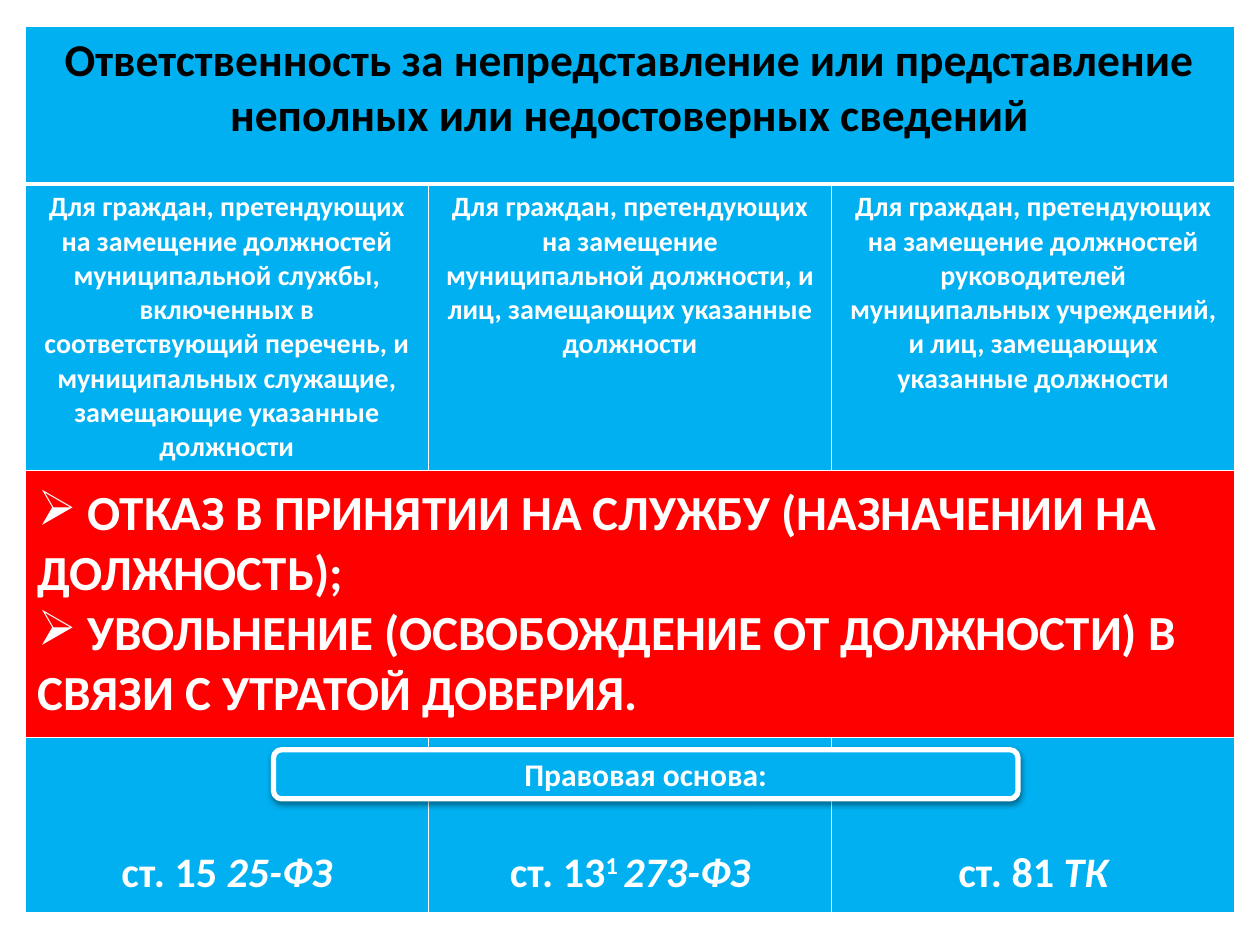
from typing import NamedTuple

from lxml import etree
from pptx import Presentation
from pptx import util as u
from pptx.dml.color import RGBColor
from pptx.enum import shapes, text
from pptx.oxml import parse_xml
from pptx.oxml.ns import nsdecls, qn

BLUE = RGBColor(0x00, 0xB0, 0xF0)
RED = RGBColor(0xFF, 0x00, 0x00)
WHITE = RGBColor(0xFF, 0xFF, 0xFF)
BLACK = RGBColor(0x00, 0x00, 0x00)
FONT = "Calibri"


class Run(NamedTuple):
    text: str
    italic: bool = False
    superscript: bool = False


class Style(NamedTuple):
    size: int
    color: RGBColor = WHITE
    align: text.PP_ALIGN = text.PP_ALIGN.CENTER
    bullet: str = ""


TITLE = Style(26, BLACK)
GROUP = Style(16)
SANCTION = Style(28, align=text.PP_ALIGN.LEFT, bullet="➢")
LAW = Style(24)
BADGE = Style(18)

HEADING = "Ответственность за непредставление или представление неполных или недостоверных сведений"
GROUPS = [
    "Для граждан, претендующих на замещение должностей муниципальной службы, включенных "
    "в соответствующий перечень, и муниципальных служащие, замещающие указанные должности",
    "Для граждан, претендующих на замещение муниципальной должности, и лиц, "
    "замещающих указанные должности",
    "Для граждан, претендующих на замещение должностей руководителей муниципальных "
    "учреждений, и лиц, замещающих указанные должности",
]
SANCTIONS = [
    " ОТКАЗ В ПРИНЯТИИ НА СЛУЖБУ (НАЗНАЧЕНИИ НА ДОЛЖНОСТЬ);",
    " УВОЛЬНЕНИЕ (ОСВОБОЖДЕНИЕ ОТ ДОЛЖНОСТИ) В СВЯЗИ С УТРАТОЙ ДОВЕРИЯ.",
]
LAWS = [
    [Run("ст. 15 "), Run("25-ФЗ", italic=True)],
    [Run("ст. 13"), Run("1 ", superscript=True), Run("273-ФЗ", italic=True)],
    [Run("ст. 81 "), Run("ТК", italic=True)],
]
ROW_HEIGHTS = [1.25, 2.27, 2.12, 1.39]
COL_WIDTH = 3.2


def write(tf, paragraphs: list[list[Run]], style: Style) -> None:
    """Fill a text frame, one paragraph per list of runs."""
    tf.word_wrap = True
    for i, runs in enumerate(paragraphs):
        p = tf.paragraphs[0] if i == 0 else tf.add_paragraph()
        p.alignment = style.align
        if style.bullet:
            pPr = p._p.get_or_add_pPr()
            pPr.set("marL", "0")
            pPr.set("indent", "0")
            etree.SubElement(pPr, qn("a:buChar")).set("char", style.bullet)
        for run in runs:
            r = p.add_run()
            r.text = run.text
            r.font.name = FONT
            r.font.size = u.Pt(style.size)
            r.font.bold = True
            r.font.italic = run.italic
            r.font.color.rgb = style.color
            if run.superscript:
                r._r.get_or_add_rPr().set("baseline", "30000")


def format_cell(cell, fill: RGBColor, bottom: float = 1, top: float = 1) -> None:
    """Set the fill and the white borders, widths in points."""
    cell.fill.solid()
    cell.fill.fore_color.rgb = fill
    widths = {"lnL": 1, "lnR": 1, "lnT": top, "lnB": bottom}
    for i, (tag, width) in enumerate(widths.items()):
        cell._tc.get_or_add_tcPr().insert(i, parse_xml(
            f'<a:{tag} {nsdecls("a")} w="{u.Pt(width)}"><a:solidFill>'
            f'<a:srgbClr val="{WHITE}"/></a:solidFill></a:{tag}>'))


def add_sanctions_table(slide) -> None:
    frame = slide.shapes.add_table(
        len(ROW_HEIGHTS), len(GROUPS), u.Inches(0.2), u.Inches(0.21),
        u.Inches(COL_WIDTH * len(GROUPS)), u.Inches(sum(ROW_HEIGHTS)))
    table = frame.table
    for col in table.columns:
        col.width = u.Inches(COL_WIDTH)
    for i, height in enumerate(ROW_HEIGHTS):
        table.rows[i].height = u.Inches(height)
        for cell in table.rows[i].cells:
            format_cell(cell, RED if i == 2 else BLUE,
                        bottom=3 if i == 0 else 1, top=3 if i == 1 else 1)

    # Full-width rows
    for i in (0, 2):
        table.cell(i, 0).merge(table.cell(i, len(GROUPS) - 1))
    write(table.cell(0, 0).text_frame, [[Run(HEADING)]], TITLE)
    sanctions = table.cell(2, 0)
    sanctions.vertical_anchor = text.MSO_ANCHOR.MIDDLE
    write(sanctions.text_frame, [[Run(s)] for s in SANCTIONS], SANCTION)

    # One column per group of people
    for col, (group, law) in enumerate(zip(GROUPS, LAWS)):
        write(table.cell(1, col).text_frame, [[Run(group)]], GROUP)
        cell = table.cell(3, col)
        cell.vertical_anchor = text.MSO_ANCHOR.BOTTOM
        cell.margin_bottom = u.Inches(0.11)
        write(cell.text_frame, [law], LAW)


def add_badge(slide, label: str) -> None:
    sp = slide.shapes.add_shape(
        shapes.MSO_SHAPE.ROUNDED_RECTANGLE,
        u.Inches(2.17), u.Inches(5.95), u.Inches(5.91), u.Inches(0.39))
    sp.fill.solid()
    sp.fill.fore_color.rgb = BLUE
    sp.line.color.rgb = WHITE
    sp.line.width = u.Pt(3)
    sp.shadow.inherit = False
    sp._element.spPr.find(qn("a:effectLst")).append(parse_xml(
        f'<a:outerShdw {nsdecls("a")} blurRad="{u.Pt(3.1)}" dist="{u.Pt(1.6)}" '
        f'dir="5400000" rotWithShape="0"><a:srgbClr val="{BLACK}">'
        '<a:alpha val="38000"/></a:srgbClr></a:outerShdw>'))
    sp.text_frame.vertical_anchor = text.MSO_ANCHOR.MIDDLE
    write(sp.text_frame, [[Run(label)]], BADGE)


def main() -> None:
    prs = Presentation()
    prs.slide_width = u.Inches(10)
    prs.slide_height = u.Inches(7.5)
    slide = prs.slides.add_slide(prs.slide_layouts[6])  # the heading is a table row
    add_sanctions_table(slide)
    add_badge(slide, "Правовая основа:")
    prs.save("out.pptx")


if __name__ == "__main__":
    main()
